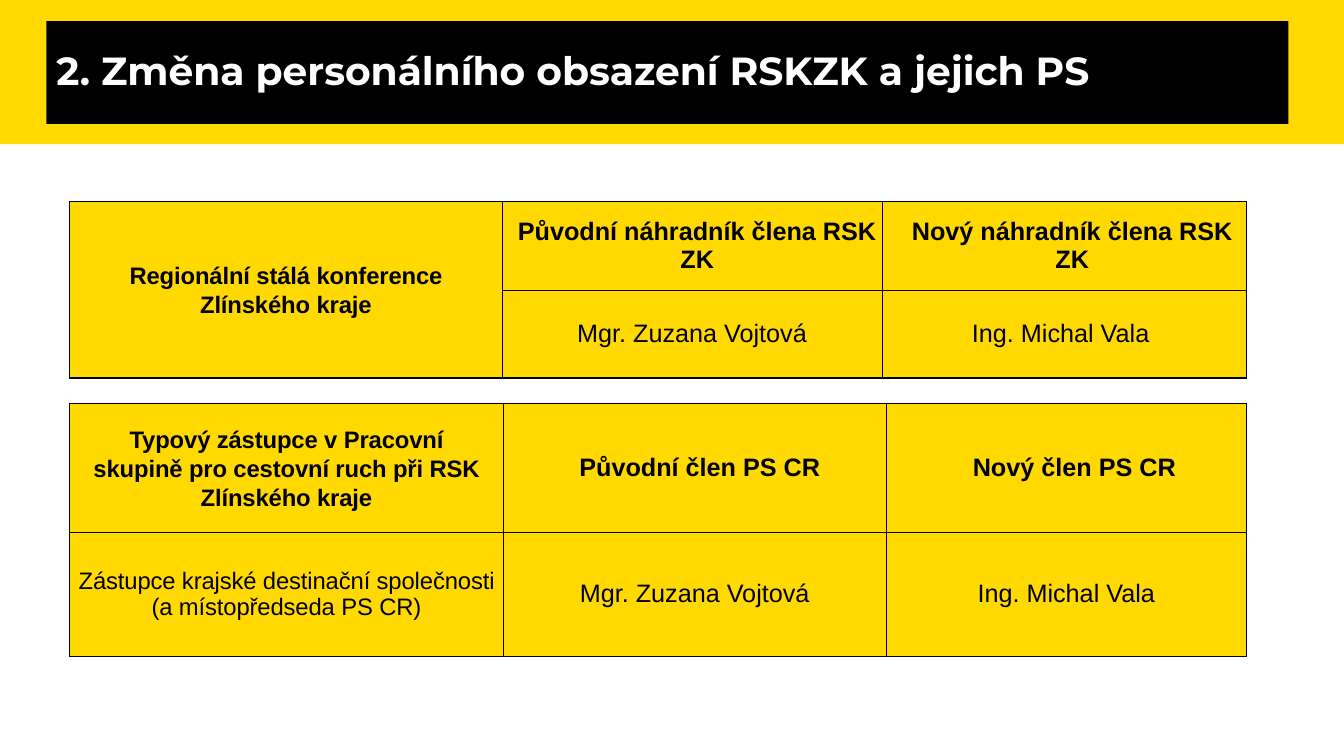
from lxml import etree
from pptx import Presentation, util as u
from pptx.dml.color import RGBColor
from pptx.enum import shapes, text
from pptx.oxml.ns import qn

YELLOW = RGBColor(0xFF, 0xD9, 0x00)
BLACK = RGBColor(0, 0, 0)
WHITE = RGBColor(0xFF, 0xFF, 0xFF)

prs = Presentation()
prs.slide_width = u.Inches(13.33)
prs.slide_height = u.Inches(7.5)
s = prs.slides.add_slide(prs.slide_layouts[5])


def x(share):
    return int(prs.slide_width * share / 100)


def y(share):
    return int(prs.slide_height * share / 100)


band = s.shapes.add_shape(shapes.MSO_SHAPE.RECTANGLE, 0, 0, x(100), y(19.07))
band.shadow.inherit = False
band.fill.solid()
band.fill.fore_color.rgb = YELLOW
band.line.fill.background()

title = s.shapes.title
band._element.getparent().insert(2, band._element)
title.left, title.top, title.width, title.height = x(3.45), y(2.8), x(92.42), y(13.6)
title.fill.solid()
title.fill.fore_color.rgb = BLACK
tf = title.text_frame
tf.word_wrap = True
tf.auto_size = text.MSO_AUTO_SIZE.NONE
tf.vertical_anchor = text.MSO_ANCHOR.MIDDLE
p = tf.paragraphs[0]
p.alignment = text.PP_ALIGN.LEFT
p.line_spacing = 0.9
r = p.add_run()
r.text = "2. Změna personálního obsazení RSKZK a jejich PS"
r.font.name = "Montserrat"
r.font.size = u.Pt(28)
r.font.bold = True
r.font.color.rgb = WHITE

# kind: size, bold, letter spacing, line spacing, left indent, right indent, side inset, top inset
STYLES = {
    "label": (17, True, -10, 20.8, 0.18, 0.18, 0, 0),
    "old": (18, True, 0, 20.1, 0.1, 0, 0, 0),
    "new": (18, True, 0, 20.1, 0.16, 0, 0, 0),
    "role": (17, False, -10, None, 0, 0, 0, 0),
    "name": (18, False, 0, None, 0, 0, 0.06, 0.04),
}

TABLES = [
    (26.67, [32.18, 28.28, 27.08], [11.73, 11.6], [
        [("label", "Regionální stálá konference Zlínského kraje"),
         ("old", "Původní náhradník člena RSK ZK"),
         ("new", "Nový náhradník člena RSK ZK")],
        [None, ("name", "Mgr. Zuzana Vojtová"), ("name", "Ing. Michal Vala ")],
    ]),
    (53.33, [32.26, 28.51, 26.78], [17.07, 16.4], [
        [("label", "Typový zástupce v Pracovní skupině pro cestovní ruch při RSK Zlínského kraje"),
         ("old", "Původní člen PS CR"),
         ("new", "Nový člen PS CR")],
        [("role", "Zástupce krajské destinační společnosti (a místopředseda PS CR)"),
         ("name", "Mgr. Zuzana Vojtová"), ("name", "Ing. Michal Vala")],
    ]),
]

for top, cols, rows, content in TABLES:
    table = s.shapes.add_table(len(rows), len(cols), x(5.18), y(top),
                               x(sum(cols)), y(sum(rows))).table
    table.first_row = False
    table.horz_banding = False
    for column, share in zip(table.columns, cols):
        column.width = x(share)
    for row, share in zip(table.rows, rows):
        row.height = y(share)
    for i, line in enumerate(content):
        for j, entry in enumerate(line):
            cell = table.cell(i, j)
            cell.fill.solid()
            cell.fill.fore_color.rgb = YELLOW
            tcPr = cell._tc.get_or_add_tcPr()
            for k, side in enumerate(("lnL", "lnR", "lnT", "lnB")):
                ln = etree.Element(qn("a:" + side), w=str(u.Pt(1)))
                fill = etree.SubElement(ln, qn("a:solidFill"))
                etree.SubElement(fill, qn("a:srgbClr"), val=str(BLACK))
                tcPr.insert(k, ln)
            if entry is None:
                table.cell(i - 1, j).merge(cell)
                continue
            kind, words = entry
            size, bold, tracking, leading, left, right, inset_x, inset_y = STYLES[kind]
            cell.vertical_anchor = text.MSO_ANCHOR.MIDDLE
            cell.margin_left = cell.margin_right = u.Inches(inset_x)
            cell.margin_top = cell.margin_bottom = u.Inches(inset_y)
            p = cell.text_frame.paragraphs[0]
            p.alignment = text.PP_ALIGN.CENTER
            if leading:
                p.line_spacing = u.Pt(leading)
            pPr = p._p.get_or_add_pPr()
            pPr.set("marL", str(u.Inches(left)))
            pPr.set("marR", str(u.Inches(right)))
            r = p.add_run()
            r.text = words
            r.font.name = "Arial"
            r.font.size = u.Pt(size)
            r.font.bold = bold
            r.font.color.rgb = BLACK
            r._r.get_or_add_rPr().set("spc", str(tracking))

prs.save("out.pptx")
